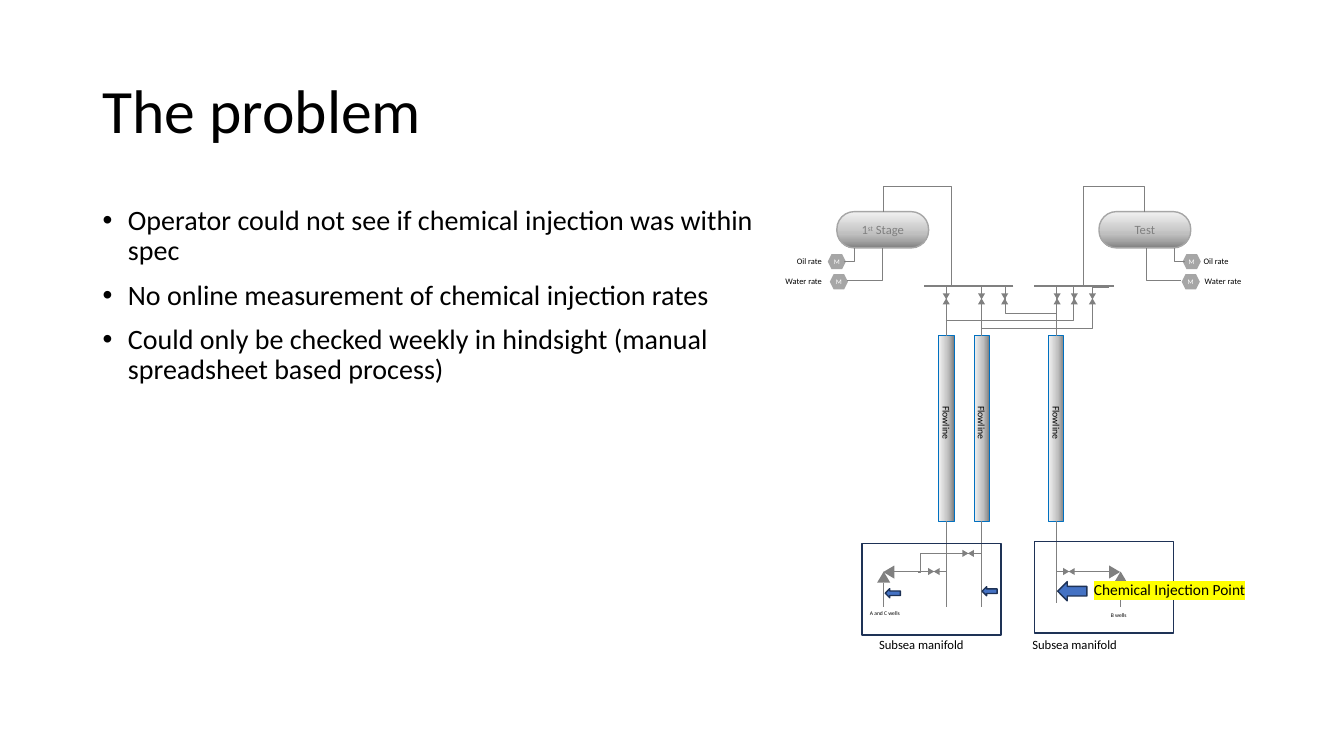
from dataclasses import dataclass

from lxml.etree import SubElement
from pptx import Presentation
from pptx.dml.color import RGBColor
from pptx.enum.shapes import MSO_CONNECTOR as Connector, MSO_SHAPE as Shape
from pptx.enum.text import MSO_ANCHOR as Anchor, MSO_AUTO_SIZE as AutoSize, PP_ALIGN as Align
from pptx.oxml.ns import qn
from pptx.util import Inches, Pt


@dataclass(frozen=True)
class Theme:
    font: str = "Calibri"
    black: str = "000000"
    white: str = "FFFFFF"
    pipe: str = "808080"
    meter: str = "A6A6A6"
    navy: str = "1E3256"
    flowline: str = "0070C0"
    arrow: str = "4472C4"
    highlight: str = "FFFF00"
    metal: tuple = ((0, "F2F2F2"), (62, "BFBFBF"), (79, "A6A6A6"), (100, "808080"))
    title: int = 44
    body: int = 20
    callout: int = 11
    label: int = 9
    flowline_label: int = 7
    rate: int = 6
    meter_label: int = 5
    well: int = 4


THEME = Theme()


def rgb(value):
    return RGBColor.from_string(value)


def lengths(box):
    return [Inches(value) for value in box]


# Text
def format_runs(paragraph, size, color):
    for run in paragraph.runs:
        run.font.name = THEME.font
        run.font.size = Pt(size)
        run.font.color.rgb = rgb(color)


def add_text(slide, box, text, size, wrap=False, align=Align.LEFT, rotation=0):
    shape = slide.shapes.add_textbox(*lengths(box))
    shape.rotation = rotation
    frame = shape.text_frame
    frame.word_wrap = wrap
    frame.auto_size = AutoSize.NONE if wrap else AutoSize.SHAPE_TO_FIT_TEXT
    frame.text = text
    for paragraph in frame.paragraphs:
        paragraph.alignment = align
        format_runs(paragraph, size, THEME.black)
    return shape


def add_bullets(slide, box, items):
    frame = add_text(slide, box, "\n".join(items), THEME.body, wrap=True).text_frame
    for index, paragraph in enumerate(frame.paragraphs):
        paragraph.line_spacing = 0.9
        paragraph.space_before = Pt(10 if index else 0)
        properties = paragraph._p.get_or_add_pPr()
        properties.set("marL", str(Inches(0.25)))
        properties.set("indent", str(-Inches(0.25)))
        SubElement(properties, qn("a:buFont"), typeface="Arial")
        SubElement(properties, qn("a:buChar"), char="•")


def highlight(run):
    mark = SubElement(run._r.rPr, qn("a:highlight"))
    SubElement(mark, qn("a:srgbClr"), val=THEME.highlight)
    run._r.rPr.find(qn("a:solidFill")).addnext(mark)


# Shapes
def add_block(parent, kind, box, fill=None, line=None, width=1, rotation=0):
    shape = parent.shapes.add_shape(kind, *lengths(box))
    shape.shadow.inherit = False
    shape.rotation = rotation
    if fill:
        shape.fill.solid()
        shape.fill.fore_color.rgb = rgb(fill)
    else:
        shape.fill.background()
    if line:
        shape.line.color.rgb = rgb(line)
        shape.line.width = Pt(width)
    else:
        shape.line.fill.background()
    return shape


def fill_metal(shape, angle):
    shape.fill.gradient()
    gradient = shape._element.spPr.find(qn("a:gradFill"))
    stops = gradient.find(qn("a:gsLst"))
    for stop in list(stops):
        stops.remove(stop)
    for position, color in THEME.metal:
        stop = SubElement(stops, qn("a:gs"), pos=str(position * 1000))
        SubElement(stop, qn("a:srgbClr"), val=color)
    gradient.find(qn("a:lin")).set("ang", str(angle * 60000))


def set_label(shape, parts, size, color):
    """Centre a label; every second part is superscript."""
    frame = shape.text_frame
    frame.margin_left = frame.margin_right = frame.margin_top = frame.margin_bottom = 0
    frame.vertical_anchor = Anchor.MIDDLE
    paragraph = frame.paragraphs[0]
    paragraph.alignment = Align.CENTER
    for part in parts:
        paragraph.add_run().text = part
    format_runs(paragraph, size, color)
    for run in paragraph.runs[1::2]:
        run._r.rPr.set("baseline", "30000")


def add_separator(slide, left, parts):
    shape = add_block(slide, Shape.ROUNDED_RECTANGLE, (left, 2.1, 0.91, 0.36), line=THEME.meter)
    shape.adjustments[0] = 0.48
    fill_metal(shape, 90)
    set_label(shape, parts, THEME.label, THEME.pipe)


def add_triangle(parent, left, top, width, height, rotation=0):
    add_block(parent, Shape.ISOSCELES_TRIANGLE, (left, top, width, height), THEME.pipe, rotation=rotation)


def add_valve(slide, left, top, horizontal=False):
    group = slide.shapes.add_group_shape()
    step_x, step_y, turn = (0.055, 0, 90) if horizontal else (0, 0.05, 180)
    add_triangle(group, left, top, 0.07, 0.06, turn)
    add_triangle(group, left + step_x, top + step_y, 0.07, 0.06, turn + 180)


# Pipes
def style_pipe(pipe, width=0.5):
    pipe.line.color.rgb = rgb(THEME.pipe)
    pipe.line.width = Pt(width)
    SubElement(pipe._element.spPr, qn("a:effectLst"))


def add_pipe(slide, start, end, width=0.5):
    pipe = slide.shapes.add_connector(Connector.STRAIGHT, *lengths(start + end))
    style_pipe(pipe, width)
    return pipe


def add_elbow(slide, box, bends, rotation=0, flip="", adjust=()):
    left, top, width, height = box
    pipe = slide.shapes.add_connector(
        Connector.ELBOW, *lengths((left, top, left + width, top + height)))
    properties = pipe._element.spPr
    transform = properties.find(qn("a:xfrm"))
    transform.set("rot", str(rotation * 60000))
    for axis in flip:
        transform.set("flip" + axis, "1")
    geometry = properties.find(qn("a:prstGeom"))
    geometry.set("prst", f"bentConnector{bends}")
    guides = geometry.find(qn("a:avLst"))
    for number, value in enumerate(adjust, 1):
        SubElement(guides, qn("a:gd"), name=f"adj{number}", fmla=f"val {round(value * 100000)}")
    style_pipe(pipe)


# Parts of the plant
def add_topside(slide):
    add_separator(slide, 8.3, ("1", "st", " Stage"))
    add_separator(slide, 10.9, ("Test",))
    for left, right in ((9.16, 10.05), (10.26, 11.05)):
        add_pipe(slide, (right, 2.84), (left, 2.84), 1.25)
    add_elbow(slide, (8.84, 2.02, 0.74, 0.9), 4, 270, "H", (-0.34, 0.75))
    add_elbow(slide, (10.68, 2.17, 0.74, 0.61), 3, 270, "HV", (-0.34,))
    # Rate meters
    for left, top in ((8.21, 2.52), (8.23, 2.72), (11.73, 2.52), (11.72, 2.72)):
        meter = add_block(slide, Shape.HEXAGON, (left, top, 0.18, 0.15), THEME.meter)
        set_label(meter, ("M",), THEME.meter_label, THEME.white)
    for water_left, oil_left, rotation, flip in ((8.42, 8.36, 90, ""), (11.38, 11.63, 270, "H")):
        add_elbow(slide, (water_left, 2.45, 0.32, 0.35), 2, rotation, flip)
        add_elbow(slide, (oil_left, 2.48, 0.13, 0.1), 3, rotation, flip, (1.02,))
    for name, top, width, right_side in (("Oil rate", 2.49, 0.47, 11.84), ("Water rate", 2.69, 0.59, 11.85)):
        add_text(slide, (8.25 - width, top, width, 0.2), name, THEME.rate, align=Align.RIGHT)
        add_text(slide, (right_side, top, width, 0.2), name, THEME.rate)


def add_flowlines(slide):
    for left, bottom in ((9.31, 6.02), (9.66, 6.02), (10.4, 5.98)):
        flowline = add_block(slide, Shape.RECTANGLE, (left, 3.33, 0.15, 1.84), line=THEME.flowline, width=0.25)
        fill_metal(flowline, 0)
        middle = left + 0.075
        add_text(slide, (middle - 0.27, 4.09, 0.54, 0.22), "Flowline", THEME.flowline_label, rotation=90)
        add_pipe(slide, (middle, 2.84), (middle, 3.33)).end_connect(flowline, 0)
        add_pipe(slide, (middle, 5.17), (middle, bottom)).begin_connect(flowline, 2)
    # Crossovers between the two headers
    add_elbow(slide, (9.93, 2.84, 0.55, 0.27), 3, 180, adjust=(0.93,))
    add_elbow(slide, (9.74, 2.85, 1.26, 0.41), 3, flip="V", adjust=(0.87,))
    add_elbow(slide, (9.38, 2.84, 1.28, 0.34), 3, flip="V", adjust=(0.99,))
    for left in (9.35, 9.7, 9.93, 10.45, 10.62, 10.8):
        add_valve(slide, left, 2.91)


def add_manifolds(slide):
    for left, top, label_left in ((8.55, 5.39, 8.62), (10.26, 5.37, 10.14)):
        add_block(slide, Shape.RECTANGLE, (left, top, 1.38, 0.91), line=THEME.navy)
        add_text(slide, (label_left, 6.27, 1.05, 0.25), "Subsea manifold", THEME.label)
    # Wellheads: centre, branch triangle, its turn, branch pipe ends
    for middle, side, turn, start, end in ((8.76, 8.75, 270, 9.38, 8.87), (11.11, 10.99, 90, 10.48, 11)):
        add_triangle(slide, middle - 0.06, 5.67, 0.13, 0.11)
        add_triangle(slide, side, 5.62, 0.13, 0.11, turn)
        add_pipe(slide, (middle, 5.78), (middle, 6.02))
        add_pipe(slide, (start, 5.67), (end, 5.67))
    add_elbow(slide, (9.11, 5.49, 0.63, 0.19), 3, flip="V", adjust=(0.03,))
    for left, top in ((9.2, 5.64), (9.54, 5.46), (10.54, 5.64)):
        add_valve(slide, left, top, horizontal=True)
    add_text(slide, (8.53, 6, 0.55, 0.17), "A and C wells", THEME.well)
    add_text(slide, (10.92, 6.02, 0.38, 0.17), "B wells", THEME.well)


def add_injection_points(slide):
    for box in ((10.49, 5.77, 0.29, 0.19), (9.74, 5.82, 0.15, 0.09), (8.78, 5.84, 0.15, 0.09)):
        add_block(slide, Shape.LEFT_ARROW, box, THEME.arrow, THEME.navy)
    callout = add_text(slide, (10.75, 5.71, 1.71, 0.29), "Chemical Injection Point", THEME.callout)
    highlight(callout.text_frame.paragraphs[0].runs[0])


def main():
    presentation = Presentation()
    presentation.slide_width, presentation.slide_height = Inches(13.33), Inches(7.5)
    slide = presentation.slides.add_slide(presentation.slide_layouts[6])

    title = add_text(slide, (0.92, 0.4, 11.5, 1.45), "The problem", THEME.title, wrap=True)
    title.text_frame.vertical_anchor = Anchor.MIDDLE
    title.text_frame.paragraphs[0].line_spacing = 0.9
    add_bullets(slide, (0.92, 2, 6.69, 4.76), (
        "Operator could not see if chemical injection was within spec",
        "No online measurement of chemical injection rates",
        "Could only be checked weekly in hindsight (manual spreadsheet based process)",
    ))
    add_topside(slide)
    add_flowlines(slide)
    add_manifolds(slide)
    add_injection_points(slide)
    presentation.save("out.pptx")


if __name__ == "__main__":
    main()
